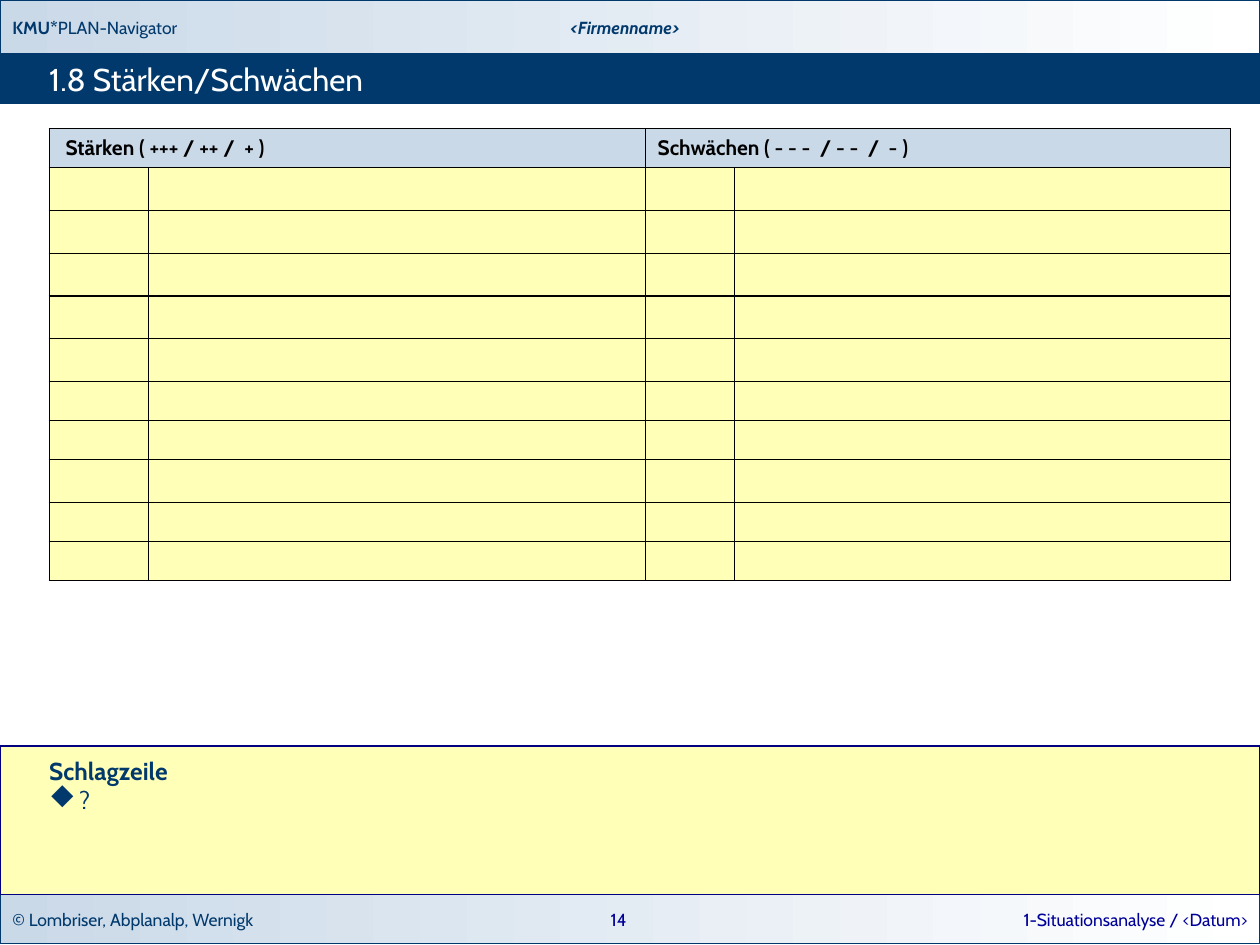
"""Build the strengths and weaknesses worksheet slide."""
from dataclasses import dataclass, field
from typing import Any, NamedTuple, Optional

from lxml.etree import SubElement
from pptx import Presentation
from pptx.dml.color import RGBColor as Rgb
from pptx.enum.shapes import MSO_SHAPE as Preset
from pptx.enum.text import MSO_ANCHOR as Anchor, PP_ALIGN as Align
from pptx.oxml.ns import qn
from pptx.util import Inches, Pt


@dataclass(frozen=True)
class Theme:
    font: str = "Cabin"
    bullet_font: str = "Wingdings"
    diamond: str = "u"
    navy: Rgb = Rgb.from_string("01396C")
    link_blue: Rgb = Rgb.from_string("000099")
    frame_blue: Rgb = Rgb.from_string("000080")
    pale_blue: Rgb = Rgb.from_string("CAD9E8")
    yellow: Rgb = Rgb.from_string("FFFFB7")
    white: Rgb = Rgb.from_string("FFFFFF")
    black: Rgb = Rgb.from_string("000000")
    small: int = 10
    heading: int = 12
    headline: int = 14
    title: int = 18
    line: float = 0.75


THEME = Theme()


class Box(NamedTuple):
    left: float
    top: float
    width: float
    height: float


class Run(NamedTuple):
    text: str
    size: int = THEME.small
    color: Rgb = THEME.navy
    bold: bool = False
    italic: bool = False


@dataclass
class Band:
    box: Box
    fill: Optional[Rgb] = None
    line: Rgb = THEME.navy
    runs: list[Run] = field(default_factory=list)


@dataclass
class Label:
    box: Box
    run: Run
    align: Align = Align.LEFT
    margin: float = 0.1


class Heading(NamedTuple):
    column: int
    text: str
    indent: float


HEADER, TITLE_BAR = Box(0, 0, 10, 0.43), Box(0, 0.43, 10, 0.39)
HEADLINE, FOOTER = Box(0, 5.92, 10, 1.18), Box(0, 7.1, 10, 0.39)
BANDS = [
    Band(FOOTER, runs=[Run("© Lombriser, Abplanalp, Wernigk")]),
    Band(HEADER, runs=[Run("KMU*", bold=True), Run("PLAN-Navigator")]),
    Band(TITLE_BAR, THEME.navy),
]
LABELS = [
    Label(Box(3.19, 0, 3.54, 0.44), Run("<Firmenname>", bold=True, italic=True), Align.CENTER),
    Label(Box(6.83, 7.1, 3.17, 0.4),
          Run("1-Situationsanalyse / <Datum>", color=THEME.link_blue), Align.RIGHT),
    Label(Box(4.67, 7.1, 0.48, 0.39), Run("14", color=THEME.link_blue), Align.CENTER),
    Label(Box(0.39, 0.43, 9.29, 0.39),
          Run("1.8 Stärken/Schwächen", THEME.title, THEME.white), margin=0),
]
GRID = Box(0.39, 1.02, 9.37, 3.56)
COLUMNS = [0.79, 3.94, 0.71, 3.94]
ROWS = [0.31] + [0.34] * 5 + [0.31] * 2 + [0.34] + [0.31] * 2
HEADINGS = [
    Heading(0, "Stärken ( +++ / ++ /  + )", 0.13),
    Heading(2, "Schwächen ( - - -  / - -  /  - )", 0.1),
]


def apply(target: Any, values: dict[str, Any]) -> None:
    """Set each named value on the target."""
    for name, value in values.items():
        setattr(target, name, value)


def inches(box: Box) -> list[Inches]:
    """Convert a box to slide lengths."""
    return [Inches(length) for length in box]


def add_run(paragraph: Any, run: Run) -> None:
    """Append one formatted run."""
    part = paragraph.add_run()
    part.text = run.text
    apply(part.font, {"name": THEME.font, "size": Pt(run.size),
                      "bold": run.bold, "italic": run.italic})
    part.font.color.rgb = run.color


def add_band(slide: Any, band: Band) -> Any:
    """Draw a full-width band, with a gradient when it has no plain fill."""
    shape = slide.shapes.add_shape(Preset.RECTANGLE, *inches(band.box))
    shape.shadow.inherit = False
    shape.line.color.rgb = band.line
    shape.line.width = Pt(THEME.line)
    if band.fill is None:
        shape.fill.gradient()
        shape.fill.gradient_angle = 0
        colors = (THEME.pale_blue, THEME.white)
        for position, (stop, color) in enumerate(zip(shape.fill.gradient_stops, colors)):
            stop.position = position
            stop.color.rgb = color
    else:
        shape.fill.solid()
        shape.fill.fore_color.rgb = band.fill
    frame = shape.text_frame
    apply(frame, {"vertical_anchor": Anchor.MIDDLE, "word_wrap": True})
    frame.paragraphs[0].alignment = Align.LEFT
    for run in band.runs:
        add_run(frame.paragraphs[0], run)
    return shape


def add_label(slide: Any, label: Label) -> None:
    """Place one line of text."""
    frame = slide.shapes.add_textbox(*inches(label.box)).text_frame
    side, edge = Inches(label.margin), Inches(label.margin / 2)
    apply(frame, {"word_wrap": True, "vertical_anchor": Anchor.MIDDLE,
                  "margin_left": side, "margin_right": side,
                  "margin_top": edge, "margin_bottom": edge})
    frame.paragraphs[0].alignment = label.align
    add_run(frame.paragraphs[0], label.run)


def style_cell(cell: Any, fill: Rgb) -> None:
    """Give a cell its borders, fill and small empty line."""
    properties = cell._tc.get_or_add_tcPr()
    for side in ("a:lnL", "a:lnR", "a:lnT", "a:lnB"):
        border = SubElement(properties, qn(side), w=str(Pt(THEME.line)))
        SubElement(SubElement(border, qn("a:solidFill")), qn("a:srgbClr"), val=str(THEME.black))
    cell.fill.solid()
    cell.fill.fore_color.rgb = fill
    SubElement(cell.text_frame.paragraphs[0]._p, qn("a:endParaRPr"), sz=str(THEME.small * 100))


def add_grid(slide: Any) -> None:
    """Draw the table of strengths and weaknesses."""
    table = slide.shapes.add_table(len(ROWS), len(COLUMNS), *inches(GRID)).table
    for column, width in zip(table.columns, COLUMNS):
        column.width = Inches(width)
    for index, (row, height) in enumerate(zip(table.rows, ROWS)):
        row.height = Inches(height)
        for cell in row.cells:
            style_cell(cell, THEME.yellow if index else THEME.pale_blue)
    for heading in HEADINGS:
        cell = table.cell(0, heading.column)
        cell.merge(table.cell(0, heading.column + 1))
        apply(cell, {"vertical_anchor": Anchor.MIDDLE, "margin_left": Inches(heading.indent)})
        add_run(cell.text_frame.paragraphs[0],
                Run(heading.text, THEME.heading, THEME.black, bold=True))


def add_headline(slide: Any) -> None:
    """Draw the headline panel with its bullet."""
    heading = Run("Schlagzeile", THEME.headline, bold=True)
    frame = add_band(slide, Band(HEADLINE, THEME.yellow, THEME.frame_blue, [heading])).text_frame
    apply(frame, {"vertical_anchor": Anchor.TOP,
                  "margin_left": Inches(0.39), "margin_right": Inches(0.2),
                  "margin_top": Inches(0.08), "margin_bottom": Inches(0.08)})
    item = frame.add_paragraph()
    item.alignment = Align.LEFT
    properties = item._p.get_or_add_pPr()
    properties.set("marL", str(Inches(0.24)))
    properties.set("indent", str(Inches(-0.24)))
    SubElement(properties, qn("a:buSzPct"), val="110000")
    SubElement(properties, qn("a:buFont"), typeface=THEME.bullet_font, charset="2")
    SubElement(properties, qn("a:buChar"), char=THEME.diamond)
    add_run(item, Run("?", THEME.headline))


def main() -> None:
    """Assemble and save the slide."""
    deck = Presentation()
    apply(deck, {"slide_width": Inches(10), "slide_height": Inches(7.5)})
    slide = deck.slides.add_slide(deck.slide_layouts[6])
    for band in BANDS:
        add_band(slide, band)
    for label in LABELS:
        add_label(slide, label)
    add_grid(slide)
    add_headline(slide)
    deck.save("out.pptx")


if __name__ == "__main__":
    main()
